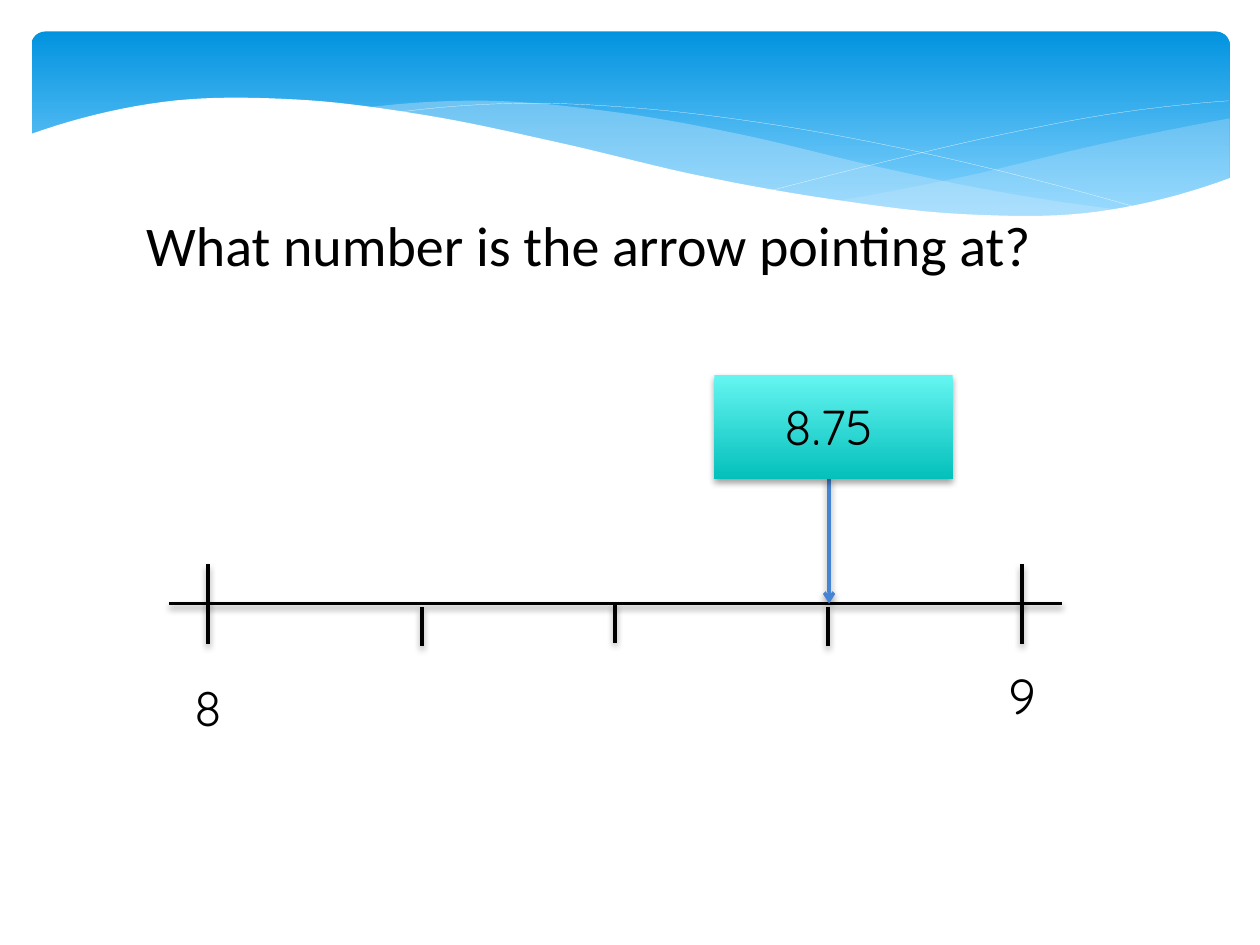
"""Build a number line slide that asks for the value under an arrow."""
import pptx
import pptx.util
import pptx.dml.color
import pptx.enum.shapes
import pptx.enum.text
import pptx.oxml
import pptx.oxml.ns
from lxml import etree

Inches, Pt = pptx.util.Inches, pptx.util.Pt
RGB = pptx.dml.color.RGBColor.from_string
Shape = pptx.enum.shapes.MSO_SHAPE
Align = pptx.enum.text.PP_ALIGN
qn = pptx.oxml.ns.qn

COLORS = {
    "sky": "0293E0", "pale": "83D3FE", "wave": "C6E7FC", "white": "FFFFFF",
    "black": "000000", "arrow": "4584D3", "mint": "65F5F1", "teal": "04C0BB",
}
SHADOW = (
    f'<a:effectLst {pptx.oxml.ns.nsdecls("a")}>'
    '<a:outerShdw blurRad="50800" dist="25400" dir="5400000" rotWithShape="0">'
    '<a:srgbClr val="000000"><a:alpha val="38000"/></a:srgbClr>'
    '</a:outerShdw></a:effectLst>'
)
STEPS = 10

prs = pptx.Presentation()
prs.slide_width, prs.slide_height = Inches(10), Inches(7.5)
slide = prs.slides.add_slide(prs.slide_layouts[5])
shapes = slide.shapes


def trace(left, right, heights):
    """Return points of a smooth curve through evenly spaced heights."""
    first = 3 * (heights[0] - heights[1]) + heights[2]
    last = 3 * (heights[-1] - heights[-2]) + heights[-3]
    knots = [first, *heights, last]
    spans = len(heights) - 1
    points = []
    for i in range(spans * STEPS + 1):
        k = min(i // STEPS, spans - 1)
        t = i / STEPS - k
        a, b, c, d = knots[k:k + 4]
        y = b + t / 2 * (c - a + t * (2 * a - 5 * b + 4 * c - d
                                      + t * (3 * (b - c) + d - a)))
        x = left + (right - left) * i / (spans * STEPS)
        points.append((Inches(x), Inches(y)))
    return points


def link(start, end, name="black"):
    """Add a straight line with a soft shadow."""
    line = shapes.add_connector(
        pptx.enum.shapes.MSO_CONNECTOR.STRAIGHT, *map(Inches, start + end))
    line.line.color.rgb = RGB(COLORS[name])
    line.line.width = Pt(2)
    line._element.spPr.append(pptx.oxml.parse_xml(SHADOW))
    return line


band = shapes.add_shape(Shape.ROUNDED_RECTANGLE,
                        *map(Inches, (0.25, 0.25, 9.51, 1.56)))
band.adjustments[0] = 0.07

waves = [
    {"span": (6.61, 9.76), "fill": "wave", "alpha": 29,
     "top": [1.6, 1.4, 1.15, 0.94],
     "base": [1.6, 1.71, 1.69, 1.41]},
    {"span": (2.86, 8.93), "fill": "wave", "alpha": 40,
     "top": [0.86, 0.8, 0.89, 1.07, 1.31, 1.52, 1.67],
     "base": [0.86, 1.02, 1.25, 1.48, 1.65, 1.73, 1.67]},
    {"span": (0.23, 9.77), "fill": "white", "alpha": 100,
     "top": [1.07, 0.81, 0.79, 0.92, 1.14, 1.39, 1.58, 1.7, 1.68, 1.41],
     "base": [2.24] * 3},
]
strands = [
    {"span": (3.09, 9.07), "top": [0.9, 0.82, 0.86, 0.98, 1.16, 1.39, 1.66]},
    {"span": (6.13, 9.75), "top": [1.51, 1.28, 1.07, 0.9, 0.8]},
]
for wave in waves[:2] + strands + waves[2:]:
    filled = "fill" in wave
    outline = trace(*wave["span"], wave["top"])
    if filled:
        outline += reversed(trace(*wave["span"], wave["base"]))
    pen = shapes.build_freeform(*outline[0])
    pen.add_line_segments(outline[1:], close=filled)
    curve = pen.convert_to_shape()
    curve.shadow.inherit = False
    if filled:
        curve.line.fill.background()
        curve.fill.solid()
        curve.fill.fore_color.rgb = RGB(COLORS[wave["fill"]])
        tint = curve._element.spPr.find(".//" + qn("a:srgbClr"))
        etree.SubElement(tint, qn("a:alpha"), val=str(wave["alpha"] * 1000))
    else:
        curve.fill.background()
        curve.line.color.rgb = RGB(COLORS["white"])
        curve.line.width = Pt(0.1)

title = shapes.title
title.left, title.top, title.width, title.height = map(
    Inches, (1.06, 1.62, 7.64, 0.64))
shapes._spTree.append(title._element)
title.text_frame.text = "What number is the arrow pointing at?"
title.text_frame.vertical_anchor = pptx.enum.text.MSO_ANCHOR.TOP
head = title.text_frame.paragraphs[0]
head.alignment = Align.LEFT
head.font.name, head.font.size = "Calibri", Pt(32)
head.font.color.rgb = RGB(COLORS["black"])

axis, long, short = 4.79, 0.63, 0.31
link((1.34, axis), (8.43, axis))
for x in (1.65, 8.11):
    link((x, axis - short), (x, axis - short + long))
for x, gap in [(3.35, 0.03), (4.88, 0), (6.57, 0.03)]:
    link((x, axis + gap), (x, axis + gap + short))

arrow = link((6.58, 3.79), (6.58, axis), "arrow")
etree.SubElement(arrow.line._get_or_add_ln(), qn("a:tailEnd"), type="arrow")
card = shapes.add_shape(Shape.RECTANGLE,
                        *map(Inches, (5.67, 2.98, 1.89, 0.82)))

for block, stops in [(band, [(0, "sky"), (0.9, "pale")]),
                     (card, [(0, "mint"), (1, "teal")])]:
    block.shadow.inherit = False
    block.line.fill.background()
    block.fill.gradient()
    block.fill.gradient_angle = 270
    for stop, (place, name) in zip(block.fill.gradient_stops, stops):
        stop.position = place
        stop.color.rgb = RGB(COLORS[name])
props = card._element.spPr
props.replace(props.find(qn("a:effectLst")), pptx.oxml.parse_xml(SHADOW))

for text, box, wrap in [("8", (1.06, 5.33, 1.18, 0.57), True),
                        ("9", (7.89, 5.23, 0.44, 0.57), False),
                        ("8.75", (5.83, 3.1, 1.49, 1.04), True)]:
    frame = shapes.add_textbox(*map(Inches, box)).text_frame
    frame.word_wrap = wrap
    frame.text = text
    label = frame.paragraphs[0]
    label.alignment = Align.CENTER
    label.font.name, label.font.size = "Quicksand", Pt(28)
    label.font.color.rgb = RGB(COLORS["black"])

prs.save("out.pptx")
